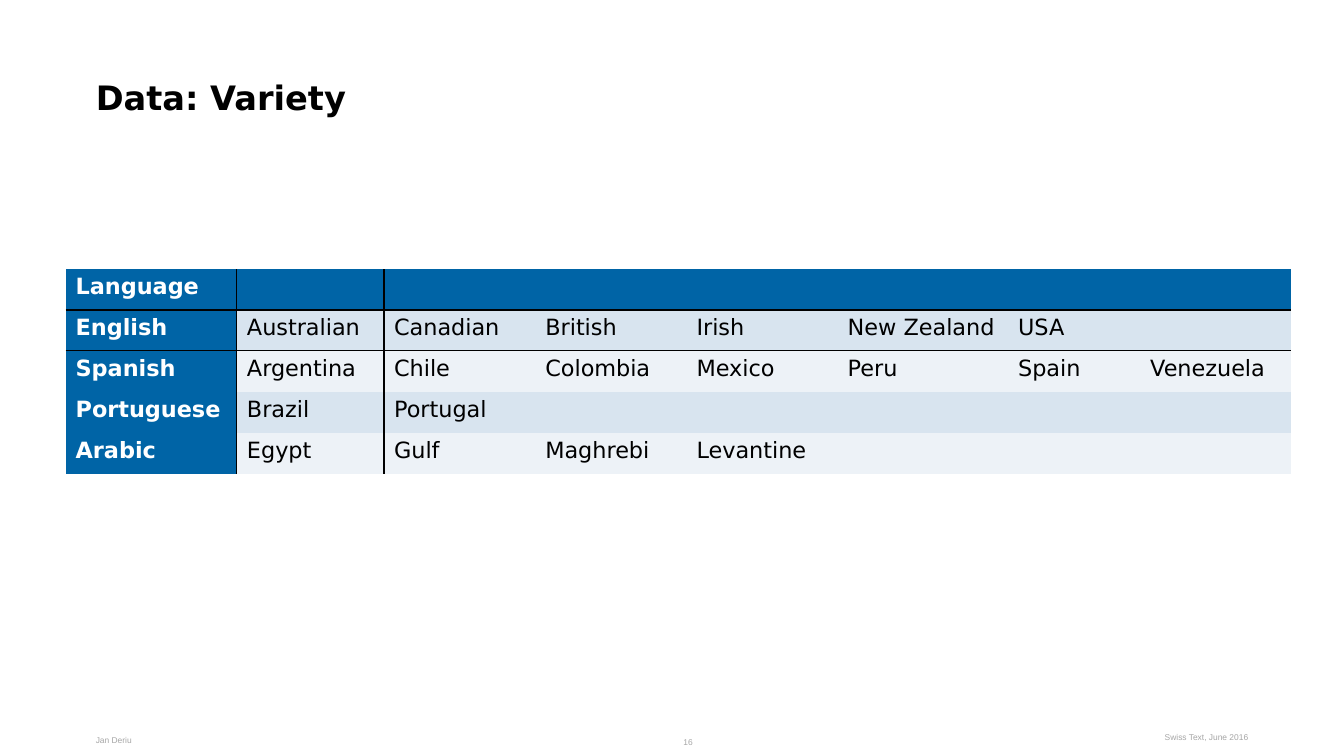
from dataclasses import dataclass

from lxml import etree
from pptx import Presentation
from pptx import util as u
from pptx.dml.color import RGBColor
from pptx.enum import text
from pptx.oxml import ns


@dataclass(frozen=True)
class Theme:
    """Colours, fonts and type sizes of the slide."""
    body_font: str = "DejaVu Sans"
    footer_font: str = "Arial"
    black: str = "000000"
    white: str = "FFFFFF"
    grey: str = "A6A6A6"
    blue: str = "0064A6"
    bands: tuple = ("D8E4EF", "EDF2F7")
    title_size: int = 24
    table_size: int = 16
    footer_size: int = 6
    rule_width: int = 1


THEME = Theme()
WIDTH, HEIGHT = u.Inches(13.33), u.Inches(7.5)
NO_GRID_STYLE = "{2D5ABB26-0587-4C30-8999-92F81FD0307C}"
COLUMN_SHARES = (12.75, 10.95, 11.25, 11.25, 11.25, 12.68, 9.83, 11.25)
ROW_SHARE = 5.41
VARIETIES = {
    "Language": (),
    "English": ("Australian", "Canadian", "British", "Irish", "New Zealand", "USA"),
    "Spanish": ("Argentina", "Chile", "Colombia", "Mexico", "Peru", "Spain", "Venezuela"),
    "Portuguese": ("Brazil", "Portugal"),
    "Arabic": ("Egypt", "Gulf", "Maghrebi", "Levantine"),
}


def across(percent):
    """Return a percentage of the slide width."""
    return round(WIDTH * percent / 100)


def down(percent):
    """Return a percentage of the slide height."""
    return round(HEIGHT * percent / 100)


def add_run(paragraph, words, font, size, colour, bold=False):
    """Append one styled run to a paragraph."""
    run = paragraph.add_run()
    run.text = words
    run.font.name = font
    run.font.size = u.Pt(size)
    run.font.bold = bold
    run.font.color.rgb = RGBColor.from_string(colour)


def add_label(slide, box, words, *style, align=text.PP_ALIGN.LEFT):
    """Add a text box without insets, placed by slide percentages."""
    left, top, width, height = box
    shape = slide.shapes.add_textbox(across(left), down(top), across(width), down(height))
    frame = shape.text_frame
    frame.word_wrap = True
    frame.margin_left = frame.margin_right = frame.margin_top = frame.margin_bottom = 0
    paragraph = frame.paragraphs[0]
    paragraph.alignment = align
    add_run(paragraph, words, *style)


def add_borders(cell, sides):
    """Draw rules on the given cell sides, ordered left, right, top, bottom."""
    properties = cell._tc.get_or_add_tcPr()
    for position, side in enumerate(sides):
        line = etree.Element(ns.qn(f"a:ln{side}"), w=str(u.Pt(THEME.rule_width)))
        fill = etree.SubElement(line, ns.qn("a:solidFill"))
        etree.SubElement(fill, ns.qn("a:srgbClr"), val=THEME.black)
        properties.insert(position, line)


def style_cell(cell, row, column, words):
    """Fill, rule and write one cell by its place in the table."""
    heading = row == 0 or column == 0
    colour = THEME.blue if heading else THEME.bands[(row - 1) % 2]
    cell.fill.solid()
    cell.fill.fore_color.rgb = RGBColor.from_string(colour)
    rules = {"L": column == 1, "R": column == 0, "T": row == 1, "B": row == 0}
    add_borders(cell, [side for side, drawn in rules.items() if drawn])
    if words:
        add_run(cell.text_frame.paragraphs[0], words, THEME.body_font, THEME.table_size,
                THEME.white if heading else THEME.black, heading)


def add_variety_table(slide, left, top):
    """Add the table of languages and their varieties."""
    frame = slide.shapes.add_table(
        len(VARIETIES), len(COLUMN_SHARES), across(left), down(top),
        across(sum(COLUMN_SHARES)), down(ROW_SHARE * len(VARIETIES)))
    table = frame.table
    table.horz_banding = False
    table.first_col = True
    table._tbl.tblPr.find(ns.qn("a:tableStyleId")).text = NO_GRID_STYLE
    for column, share in zip(table.columns, COLUMN_SHARES):
        column.width = across(share)
    for row, (language, varieties) in enumerate(VARIETIES.items()):
        table.rows[row].height = down(ROW_SHARE)
        entries = (language, *varieties)
        for column in range(len(COLUMN_SHARES)):
            words = entries[column] if column < len(entries) else ""
            style_cell(table.cell(row, column), row, column, words)


def add_footer(slide):
    """Add the author, page number and event."""
    style = (THEME.footer_font, THEME.footer_size, THEME.grey)
    right = text.PP_ALIGN.RIGHT
    add_label(slide, (7.13, 97.2, 9.6, 3.2), "Jan Deriu", *style)
    add_label(slide, (41.26, 97.47, 10.28, 2.53), "16", *style, align=right)
    add_label(slide, (83.27, 96.8, 9.6, 3.2), "Swiss Text, June 2016", *style, align=right)


def main():
    """Build and save the slide."""
    presentation = Presentation()
    presentation.slide_width, presentation.slide_height = WIDTH, HEIGHT
    slide = presentation.slides.add_slide(presentation.slide_layouts[6])
    add_footer(slide)
    add_label(slide, (7.13, 10.13, 69.77, 11.33), "Data: Variety",
              THEME.body_font, THEME.title_size, THEME.black, True)
    add_variety_table(slide, 4.88, 35.6)
    presentation.save("out.pptx")


if __name__ == "__main__":
    main()
